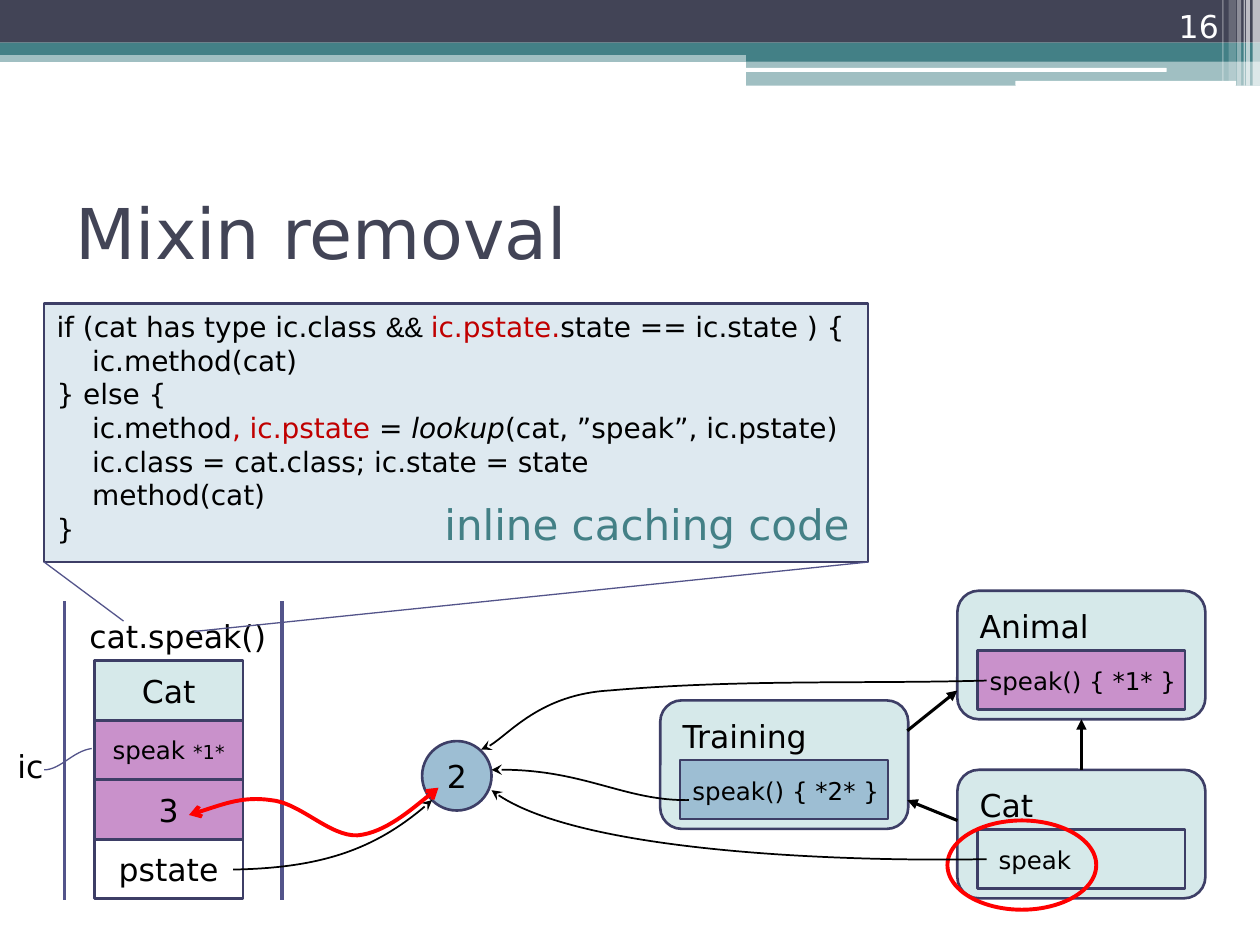
"""Build the "Mixin removal" slide: inline cache code, cache entry and class diagram."""
from lxml import etree
from pptx import Presentation
from pptx.dml.color import RGBColor
from pptx.enum.shapes import MSO_CONNECTOR, MSO_SHAPE
from pptx.enum.text import MSO_ANCHOR, MSO_AUTO_SIZE, PP_ALIGN
from pptx.oxml.ns import qn
from pptx.util import Cm, Pt

RECT, ROUND, OVAL = MSO_SHAPE.RECTANGLE, MSO_SHAPE.ROUNDED_RECTANGLE, MSO_SHAPE.OVAL
STRAIGHT = MSO_CONNECTOR.STRAIGHT
TOP, MIDDLE, BOTTOM = MSO_ANCHOR.TOP, MSO_ANCHOR.MIDDLE, MSO_ANCHOR.BOTTOM
LEFT, CENTER, RIGHT = PP_ALIGN.LEFT, PP_ALIGN.CENTER, PP_ALIGN.RIGHT
FIT = MSO_AUTO_SIZE.SHAPE_TO_FIT_TEXT

BLACK = RGBColor(0x00, 0x00, 0x00)
WHITE = RGBColor(0xFF, 0xFF, 0xFF)
SLATE = RGBColor(0x42, 0x44, 0x56)
TEAL = RGBColor(0x43, 0x80, 0x86)
BORDER = RGBColor(0x3D, 0x3E, 0x66)
INDIGO = RGBColor(0x53, 0x54, 0x8A)
MINT = RGBColor(0xD6, 0xE9, 0xEA)
BLUE = RGBColor(0x9D, 0xBE, 0xD3)
PURPLE = RGBColor(0xC9, 0x91, 0xCB)
PALE = RGBColor(0xDE, 0xE9, 0xF0)
DARK_RED = RGBColor(0xC0, 0x00, 0x00)
RED = RGBColor(0xFF, 0x00, 0x00)
FONT = "DejaVu Sans"

BANNER = [
    (RECT, (0, 1.02, 25.4, 0.23), TEAL, 50),
    (RECT, (0, 0, 25.4, 0.86), SLATE, 100),
    (RECT, (0, 0.86, 25.4, 0.25), TEAL, 100),
    (RECT, (15.04, 0.99, 10.36, 0.25), TEAL, 100),
    (RECT, (15.04, 1.22, 10.36, 0.51), TEAL, 50),
    (ROUND, (15.01, 1.37, 8.51, 0.08), WHITE, 100),
    (ROUND, (20.47, 1.63, 4.45, 0.1), WHITE, 100),
    (RECT, (25.25, 0, 0.15, 1.73), WHITE, 65),
    (RECT, (25.12, 0, 0.08, 1.73), WHITE, 65),
    (RECT, (25.07, 0, 0.03, 1.73), WHITE, 60),
    (RECT, (24.94, 0, 0.08, 1.73), WHITE, 40),
    (RECT, (24.77, 0, 0.15, 1.63), WHITE, 20),
    (RECT, (24.64, 0, 0.03, 1.63), WHITE, 30),
]
CODE = [
    (0, [("if (cat has type ic.class ", {}), ("&& ", {"font": "Arial"}),
         ("ic.pstate.", {"color": DARK_RED}), ("state == ic.state ) {", {})]),
    (0.72, "ic.method(cat)"),
    (0, "} else {"),
    (0.72, [("ic.method", {}), (", ic.pstate ", {"color": DARK_RED}), ("= ", {}),
            ("lookup", {"italic": True}), ("(cat, ”speak”, ic.pstate)", {})]),
    (0.72, "ic.class = cat.class; ic.state = state"),
    (0.72, "method(cat)"),
    (0, "}"),
]
CLASSES = [
    ("Training", (13.31, 14.12), 3.05, "speak() { *2* }", BLUE, 0, 4.52),
    ("Cat", (19.3, 15.52), 1.7, "speak", None, 0.18, 3),
    ("Animal", (19.3, 11.91), 2.72, "speak() { *1* }", PURPLE, 0, 4.52),
]
CACHE_CELLS = [
    ("Cat", MINT, 18),
    ([("speak ", {}), ("*1*", {"size": 11})], PURPLE, 14),
    ("3", PURPLE, 18),
    ("pstate", WHITE, 18),
]
LABELS = [
    ("Mixin removal", (1.27, 3.18, 22.86, 2.97), True,
     dict(size=40, color=SLATE, anchor=MIDDLE)),
    ("16", (22.71, 0, 2.11, 1.02), True, dict(color=WHITE, align=RIGHT, anchor=BOTTOM)),
    ("inline caching code", (8.71, 9.93, 8.69, 1.27), False, dict(size=24, color=TEAL)),
    ("cat.speak()", (1.5, 12.32, 4.17, 0.99), False, dict(align=CENTER)),
    ("ic", (0.1, 14.94, 1.15, 1.02), False, {}),
]
LINES = [
    ((1.3, 12.12), (1.3, 18.14), INDIGO, 2, None),
    ((5.69, 12.12), (5.69, 18.14), INDIGO, 2, None),
    ((0.89, 11.33), (2.49, 12.52), INDIGO, 0.75, None),
    ((17.5, 11.33), (3.91, 12.73), INDIGO, 0.75, None),
    ((19.3, 16.54), (18.29, 16.13), BLACK, 1.75, "triangle"),
    ((18.29, 14.73), (19.3, 13.92), BLACK, 1.75, "triangle"),
]
CURVES = [
    ([(1.85, 15.09), (1.47, 15.14), (1.22, 15.52), (0.89, 15.52)], INDIGO, 0.75, None, None),
    ([(19.89, 17.32), (17.55, 17.37), (11.58, 17.25), (9.91, 15.93)],
     BLACK, 1, None, "stealth"),
    ([(19.89, 13.72), (17.37, 13.79), (14.94, 13.69), (12.29, 13.92),
      (10.9, 14), (10.03, 15.06), (9.7, 15.11)], BLACK, 1, None, "stealth"),
    ([(13.89, 16.13), (12.6, 16.15), (11.73, 15.47), (9.91, 15.52)],
     BLACK, 1, None, "stealth"),
    ([(4.7, 17.53), (6.5, 17.5), (7.67, 17.07), (8.71, 16.13)], BLACK, 1, None, "stealth"),
    ([(3.81, 16.43), (4.37, 16.26), (4.9, 16.05), (5.46, 16.13), (6.05, 16.18),
      (6.65, 16.87), (7.21, 16.84), (7.77, 16.79), (8.84, 15.88), (8.84, 15.88)],
     RED, 2.25, "arrow", "arrow"),
]


def write(frame, text, size=18, color=BLACK, align=LEFT, anchor=TOP):
    """Fill a frame with a string, a list of runs, or (indent, text) paragraphs."""
    frame.vertical_anchor = anchor
    paragraphs = text if isinstance(text[0][0], (int, float)) else [(0, text)]
    for number, (indent, content) in enumerate(paragraphs):
        paragraph = frame.add_paragraph() if number else frame.paragraphs[0]
        paragraph.alignment = align
        if indent:
            paragraph._p.get_or_add_pPr().set("marL", str(Cm(indent)))
        for words, change in [(content, {})] if isinstance(content, str) else content:
            run = paragraph.add_run()
            run.text = words
            run.font.name = change.get("font", FONT)
            run.font.size = Pt(change.get("size", size))
            run.font.italic = change.get("italic")
            run.font.color.rgb = change.get("color", color)


def add_label(slide, text, box, wrap=False, **style):
    label = slide.shapes.add_textbox(*map(Cm, box))
    label.text_frame.word_wrap = wrap
    if not wrap:
        label.text_frame.auto_size = FIT
    write(label.text_frame, text, **style)


def draw_line(item, color, width, head=None, tail=None):
    item.line.color.rgb = color
    item.line.width = Pt(width)
    for tag, kind in (("a:headEnd", head), ("a:tailEnd", tail)):
        if kind:
            etree.SubElement(item.line._get_or_add_ln(), qn(tag), type=kind)


def add_box(slide, kind, box, fill=None, border=BORDER, width=1.5, opacity=100):
    shape = slide.shapes.add_shape(kind, *map(Cm, box))
    shape.shadow.inherit = False
    if fill is None:
        shape.fill.background()
    else:
        shape.fill.solid()
        shape.fill.fore_color.rgb = fill
        if opacity < 100:
            tint = shape._element.spPr.find(".//" + qn("a:srgbClr"))
            etree.SubElement(tint, qn("a:alpha"), val=str(opacity * 1000))
    if border is None:
        shape.line.fill.background()
    else:
        draw_line(shape, border, width)
    return shape


def add_line(slide, start, end, color, width, tail):
    line = slide.shapes.add_connector(STRAIGHT, *map(Cm, start + end))
    draw_line(line, color, width, tail=tail)
    etree.SubElement(line._element.spPr, qn("a:effectLst"))
    return line


def add_curve(slide, points, color, width, head, tail):
    """Draw a freeform whose points after the first are cubic Bezier triples."""
    start, *rest = [(Cm(x), Cm(y)) for x, y in points]
    builder = slide.shapes.build_freeform(*start)
    builder.add_line_segments(rest, close=False)
    curve = builder.convert_to_shape()
    curve.shadow.inherit = False
    curve.fill.background()
    draw_line(curve, color, width, head, tail)
    steps = list(curve._element.iter(qn("a:lnTo")))
    for first in range(0, len(steps), 3):
        bezier = etree.Element(qn("a:cubicBezTo"))
        steps[first].addprevious(bezier)
        for step in steps[first:first + 3]:
            bezier.append(step[0])
            step.getparent().remove(step)


def main():
    deck = Presentation()
    deck.slide_width, deck.slide_height = Cm(25.4), Cm(19.05)
    slide = deck.slides.add_slide(deck.slide_layouts[6])
    for kind, box, color, opacity in BANNER:
        add_box(slide, kind, box, color, border=None, opacity=opacity)
    class_boxes = {}
    for name, (x, y), name_width, method, fill, shift, method_width in CLASSES:
        class_boxes[name] = add_box(slide, ROUND, (x, y, 5, 2.59), MINT)
        add_label(slide, name, (x + 0.2, y + 0.2, name_width, 1.02))
        add_box(slide, RECT, (x + 0.4, y + 1.2, 4.19, 1.19), fill)
        add_label(slide, method, (x + 0.4 + shift, y + 1.4, method_width, 0.86), size=14)
    code = add_box(slide, RECT, (0.89, 6.12, 16.61, 5.21), PALE)
    write(code.text_frame, CODE, size=16)
    for row, (text, fill, size) in enumerate(CACHE_CELLS):
        cell = add_box(slide, RECT, (1.9, 13.32 + 1.2 * row, 3, 1.2), fill)
        write(cell.text_frame, text, size=size, align=CENTER, anchor=MIDDLE)
    state = add_box(slide, OVAL, (8.51, 14.94, 1.4, 1.4), BLUE)
    write(state.text_frame, "2", align=CENTER, anchor=MIDDLE)
    for text, box, wrap, style in LABELS:
        add_label(slide, text, box, wrap, **style)
    for line in LINES:
        add_line(slide, *line)
    inherits = add_line(slide, (21.8, 15.52), (21.8, 14.5), BLACK, 1.75, "triangle")
    inherits.begin_connect(class_boxes["Cat"], 0)
    inherits.end_connect(class_boxes["Animal"], 2)
    add_box(slide, OVAL, (19.1, 16.54, 3, 1.8), border=RED, width=2.25)
    for curve in CURVES:
        add_curve(slide, *curve)
    deck.save("out.pptx")


if __name__ == "__main__":
    main()
